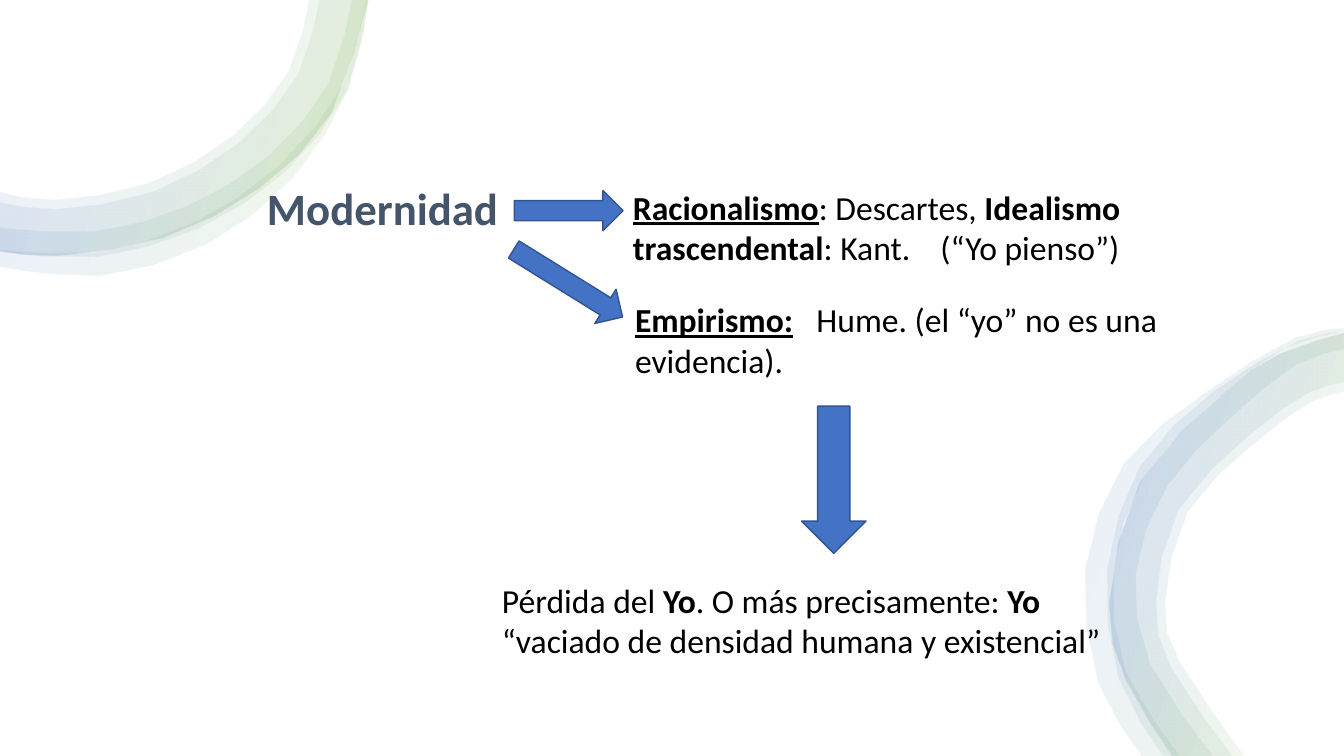
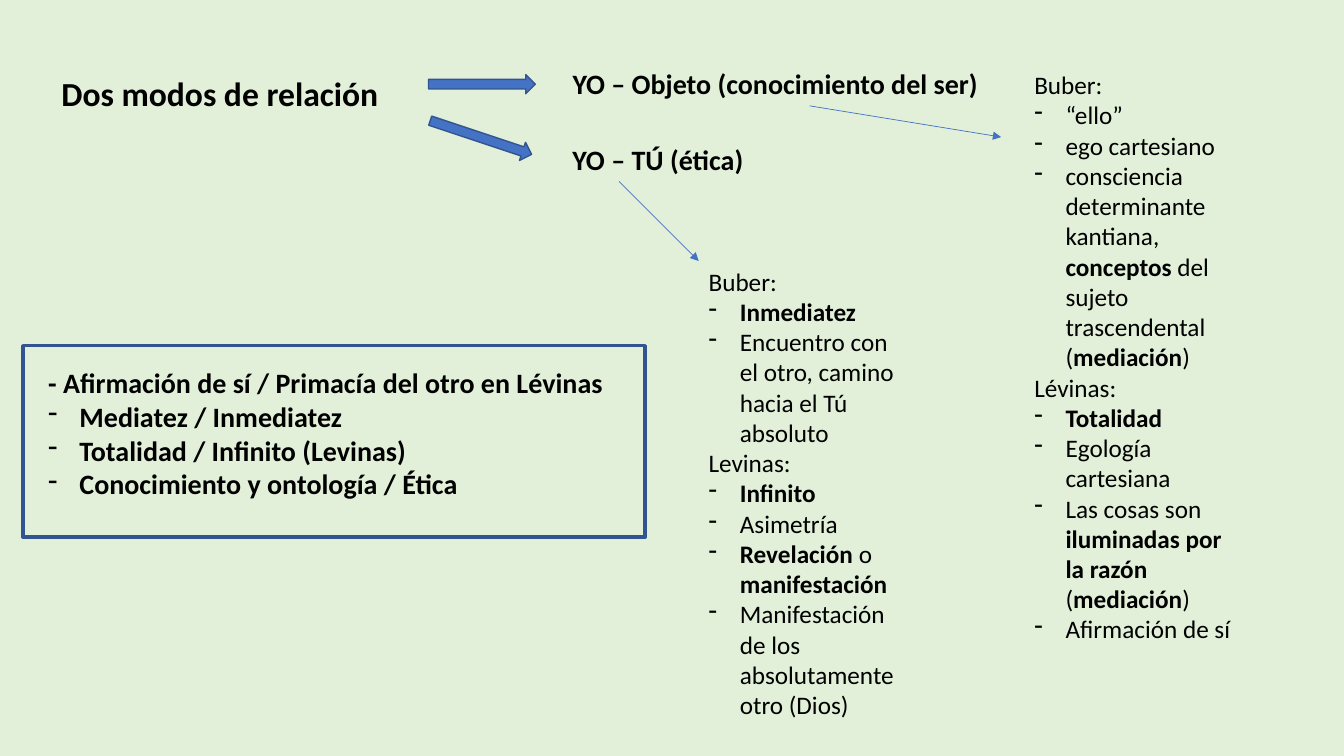
from lxml import etree
from pptx import Presentation
from pptx.dml.color import RGBColor
from pptx.enum.shapes import MSO_CONNECTOR, MSO_SHAPE
from pptx.oxml.ns import qn
from pptx.util import Inches, Pt

RIGHT_ARROW = MSO_SHAPE.RIGHT_ARROW
DOWN_ARROW = MSO_SHAPE.DOWN_ARROW
RECTANGLE = MSO_SHAPE.RECTANGLE
STRAIGHT = MSO_CONNECTOR.STRAIGHT

WHITE = RGBColor(0xFF, 0xFF, 0xFF)
BLACK = RGBColor(0x00, 0x00, 0x00)
SLATE = RGBColor(0x44, 0x54, 0x6A)
BLUE = RGBColor(0x44, 0x72, 0xC4)
DARK_BLUE = RGBColor(0x32, 0x54, 0x91)
GREEN = RGBColor(0x70, 0xAD, 0x47)
PALE_GREEN = RGBColor(0xE2, 0xF0, 0xD9)
FONT = "Calibri"
INDENT = Inches(0.31)
RIBBON_STOPS = [(2, WHITE), (16, GREEN), (85, BLUE), (100, WHITE)]
RIBBON_ANGLE = 200
RIBBON_ALPHA = 10

LEFT_OUTER = [(3.64, 0), (3.28, 1.12), (2.57, 1.86), (1.62, 2.35),
              (0.56, 2.53), (0, 2.48)]
LEFT_RIBBONS = [
    (LEFT_OUTER,
     [(3.06, 0), (2.86, 0.7), (2.3, 1.35), (1.48, 1.81), (0.56, 1.98), (0, 1.9)]),
    (LEFT_OUTER,
     [(3.16, 0), (2.95, 0.74), (2.36, 1.42), (1.51, 1.9), (0.56, 2.07), (0, 2)]),
    ([(3.64, 0), (3.43, 0.9), (2.82, 1.7), (1.96, 2.26), (0.96, 2.54), (0, 2.49)],
     [(3.48, 0), (3.25, 0.82), (2.66, 1.54), (1.85, 2.04), (0.93, 2.29), (0, 2.25)]),
    ([(3.66, 0), (3.46, 0.88), (2.91, 1.76), (2.05, 2.42), (0.99, 2.73), (0, 2.64)],
     [(3.63, 0), (3.4, 0.85), (2.77, 1.64), (1.93, 2.2), (0.96, 2.5), (0, 2.47)]),
]

RIGHT_OUTER = [(13.34, 3.3), (12.67, 3.52), (12.13, 3.91), (11.31, 4.78),
               (11.01, 5.98), (11.17, 6.74), (11.63, 7.5)]
RIGHT_RIBBONS = [
    ([(13.34, 3.26), (12.84, 3.35), (11.96, 3.89), (11.15, 4.6), (10.77, 5.65),
      (10.9, 6.78), (11.33, 7.5)],
     [(13.34, 3.29), (12.74, 3.45), (12.02, 4), (11.34, 4.74), (11.05, 5.68),
      (11.17, 6.66), (11.7, 7.5)]),
    ([(13.34, 3.3), (12.88, 3.38), (12.03, 3.89), (11.31, 4.63), (10.99, 5.65),
      (11.1, 6.73), (11.54, 7.5)],
     [(13.34, 3.46), (12.85, 3.62), (12.2, 4.15), (11.58, 4.82), (11.27, 5.68),
      (11.41, 6.58), (12.03, 7.5)]),
    (RIGHT_OUTER,
     [(13.34, 3.79), (12.97, 3.9), (12.39, 4.32), (11.69, 5.06), (11.47, 5.98),
      (11.62, 6.62), (12.22, 7.5)]),
    (RIGHT_OUTER,
     [(13.34, 3.89), (13, 3.99), (12.44, 4.4), (11.78, 5.08), (11.56, 5.98),
      (11.7, 6.56), (12.34, 7.5)]),
]


def new_slide(deck, color):
    slide = deck.slides.add_slide(deck.slide_layouts[6])
    slide.background.fill.solid()
    slide.background.fill.fore_color.rgb = color
    return slide


def smooth_edge(points, steps=2):
    padded = [points[0], *points, points[-1]]
    edge = []
    for before, start, end, after in zip(padded, padded[1:], padded[2:], padded[3:]):
        for step in range(steps):
            t = step / steps
            edge.append(tuple(
                0.5 * (2 * b + (c - a) * t + (2 * a - 5 * b + 4 * c - d) * t ** 2
                       + (3 * b - a - 3 * c + d) * t ** 3)
                for a, b, c, d in zip(before, start, end, after)))
    return edge + [points[-1]]


def add_ribbon(slide, outer, inner):
    outline = smooth_edge(outer) + smooth_edge(inner)[::-1]
    corners = [(Inches(x), Inches(y)) for x, y in outline]
    builder = slide.shapes.build_freeform(*corners[0])
    builder.add_line_segments(corners[1:], close=True)
    ribbon = builder.convert_to_shape()
    ribbon.shadow.inherit = False
    ribbon.line.fill.background()
    ribbon.fill.gradient()
    gradient = ribbon._element.spPr.find(qn("a:gradFill"))
    for child in list(gradient):
        gradient.remove(child)
    stops = etree.SubElement(gradient, qn("a:gsLst"))
    for position, color in RIBBON_STOPS:
        stop = etree.SubElement(stops, qn("a:gs"), pos=str(position * 1000))
        tint = etree.SubElement(stop, qn("a:srgbClr"), val=str(color))
        etree.SubElement(tint, qn("a:alpha"), val=str(RIBBON_ALPHA * 1000))
    etree.SubElement(gradient, qn("a:lin"), ang=str(RIBBON_ANGLE * 60000), scaled="0")


def add_text(slide, box, paras, size, color=BLACK, after=0, spacing=1.0, tab=None):
    frame = slide.shapes.add_textbox(*map(Inches, box)).text_frame
    frame.word_wrap = True
    for index, (bullet, spans) in enumerate(paras):
        para = frame.paragraphs[0] if index == 0 else frame.add_paragraph()
        para.space_after = Pt(after)
        para.line_spacing = spacing
        properties = para._p.get_or_add_pPr()
        if bullet:
            properties.set("marL", str(INDENT))
            properties.set("indent", str(-INDENT))
            etree.SubElement(properties, qn("a:buChar"), char="-")
        if tab:
            stops = etree.SubElement(properties, qn("a:tabLst"))
            etree.SubElement(stops, qn("a:tab"), pos=str(Inches(tab)), algn="l")
        for words, style in spans:
            span = para.add_run()
            span.text = words
            span.font.name = FONT
            span.font.size = Pt(size)
            span.font.color.rgb = color
            span.font.bold = "b" in style
            span.font.underline = "u" in style


def plain(*spans):
    return False, spans


def item(*spans):
    return True, spans


def add_block_arrow(slide, box, kind=RIGHT_ARROW, rotation=0):
    arrow = slide.shapes.add_shape(kind, *map(Inches, box))
    arrow.shadow.inherit = False
    arrow.rotation = rotation
    arrow.fill.solid()
    arrow.fill.fore_color.rgb = BLUE
    arrow.line.color.rgb = DARK_BLUE
    arrow.line.width = Pt(1)


def add_thin_arrow(slide, start, end):
    arrow = slide.shapes.add_connector(STRAIGHT, *map(Inches, (*start, *end)))
    arrow.line.color.rgb = BLUE
    arrow.line.width = Pt(0.5)
    outline = arrow._element.spPr.find(qn("a:ln"))
    etree.SubElement(outline, qn("a:tailEnd"), type="triangle")
    etree.SubElement(arrow._element.spPr, qn("a:effectLst"))


def add_contrast_panel(slide, box):
    left, top, width, height = box
    add_text(slide, (left + 0.15, top + 0.15, width - 0.4, height - 0.15), [
        plain(("- Afirmación de sí / Primacía del otro en Lévinas", "b")),
        item(("Mediatez / Inmediatez", "b")),
        item(("Totalidad / Infinito (Levinas)", "b")),
        item(("Conocimiento y ontología / Ética", "b")),
    ], 20)
    panel = slide.shapes.add_shape(RECTANGLE, *map(Inches, box))
    panel.shadow.inherit = False
    panel.fill.background()
    panel.line.color.rgb = DARK_BLUE
    panel.line.width = Pt(2.5)


def build_modernity(deck):
    slide = new_slide(deck, WHITE)
    for outer, inner in LEFT_RIBBONS + RIGHT_RIBBONS:
        add_ribbon(slide, outer, inner)
    add_text(slide, (2.55, 1.8, 2.6, 0.97), [plain(("Modernidad", "b"))],
             32, SLATE, after=6, spacing=0.9)
    add_block_arrow(slide, (5.1, 1.89, 1.08, 0.4))
    add_block_arrow(slide, (5, 2.61, 1.27, 0.4), rotation=31.8)
    add_block_arrow(slide, (7.95, 4.03, 0.64, 1.46), DOWN_ARROW)
    add_text(slide, (6.18, 1.8, 6.67, 0.91), [plain(
        ("Racionalismo", "bu"), (": Descartes, ", ""),
        ("Idealismo trascendental", "b"), (": Kant.\t(“Yo pienso”)", ""))],
        24, after=6, tab=3.05)
    add_text(slide, (6.2, 2.92, 6.67, 0.91), [plain(
        ("Empirismo:", "bu"), ("\tHume. (el “yo” no es una evidencia).", ""))],
        24, after=6, tab=1.8)
    add_text(slide, (4.88, 5.7, 6.55, 0.91), [plain(
        ("Pérdida del ", ""), ("Yo", "b"), (". O más precisamente: ", ""),
        ("Yo", "b"), (" “vaciado de densidad humana y existencial”", ""))],
        24, after=6)


def build_relations(deck):
    slide = new_slide(deck, PALE_GREEN)
    add_text(slide, (0.51, 0.67, 4.91, 0.5), [plain(("Dos modos de relación", "b"))], 24)
    add_block_arrow(slide, (4.25, 0.74, 1.06, 0.19))
    add_block_arrow(slide, (4.24, 1.27, 1.06, 0.19), rotation=18.4)
    add_text(slide, (5.58, 0.61, 4.35, 0.44),
             [plain(("YO – Objeto (conocimiento del ser)", "b"))], 20)
    add_text(slide, (5.58, 1.36, 1.9, 0.44), [plain(("YO – TÚ (ética)", "b"))], 20)
    add_thin_arrow(slide, (8.03, 1.05), (9.93, 1.36))
    add_thin_arrow(slide, (6.14, 1.8), (6.93, 2.59))
    add_text(slide, (10.16, 0.64, 2.29, 5.86), [
        plain(("Buber:", "")),
        item(("“ello”", "")),
        item(("ego cartesiano", "")),
        item(("consciencia determinante kantiana, ", ""), ("conceptos", "b"),
             (" del sujeto trascendental (", ""), ("mediación", "b"), (")", "")),
        plain(("Lévinas:", "")),
        item(("Totalidad", "b")),
        item(("Egología cartesiana", "")),
        item(("Las cosas son ", ""), ("iluminadas por la razón ", "b"),
             ("(", ""), ("mediación", "b"), (")", "")),
        item(("Afirmación de sí", "")),
    ], 18)
    add_text(slide, (6.93, 2.59, 2.07, 4.65), [
        plain(("Buber:", "")),
        item(("Inmediatez", "b")),
        item(("Encuentro con el otro, camino hacia el Tú absoluto", "")),
        plain(("Levinas:", "")),
        item(("Infinito", "b")),
        item(("Asimetría", "")),
        item(("Revelación ", "b"), ("o ", ""), ("manifestación", "b")),
        item(("Manifestación de los absolutamente otro (Dios)", "")),
    ], 18)
    add_contrast_panel(slide, (0.23, 3.43, 6.17, 1.9))


def main():
    deck = Presentation()
    deck.slide_width = Inches(13.33)
    deck.slide_height = Inches(7.5)
    build_modernity(deck)
    build_relations(deck)
    deck.save("out.pptx")


if __name__ == "__main__":
    main()
